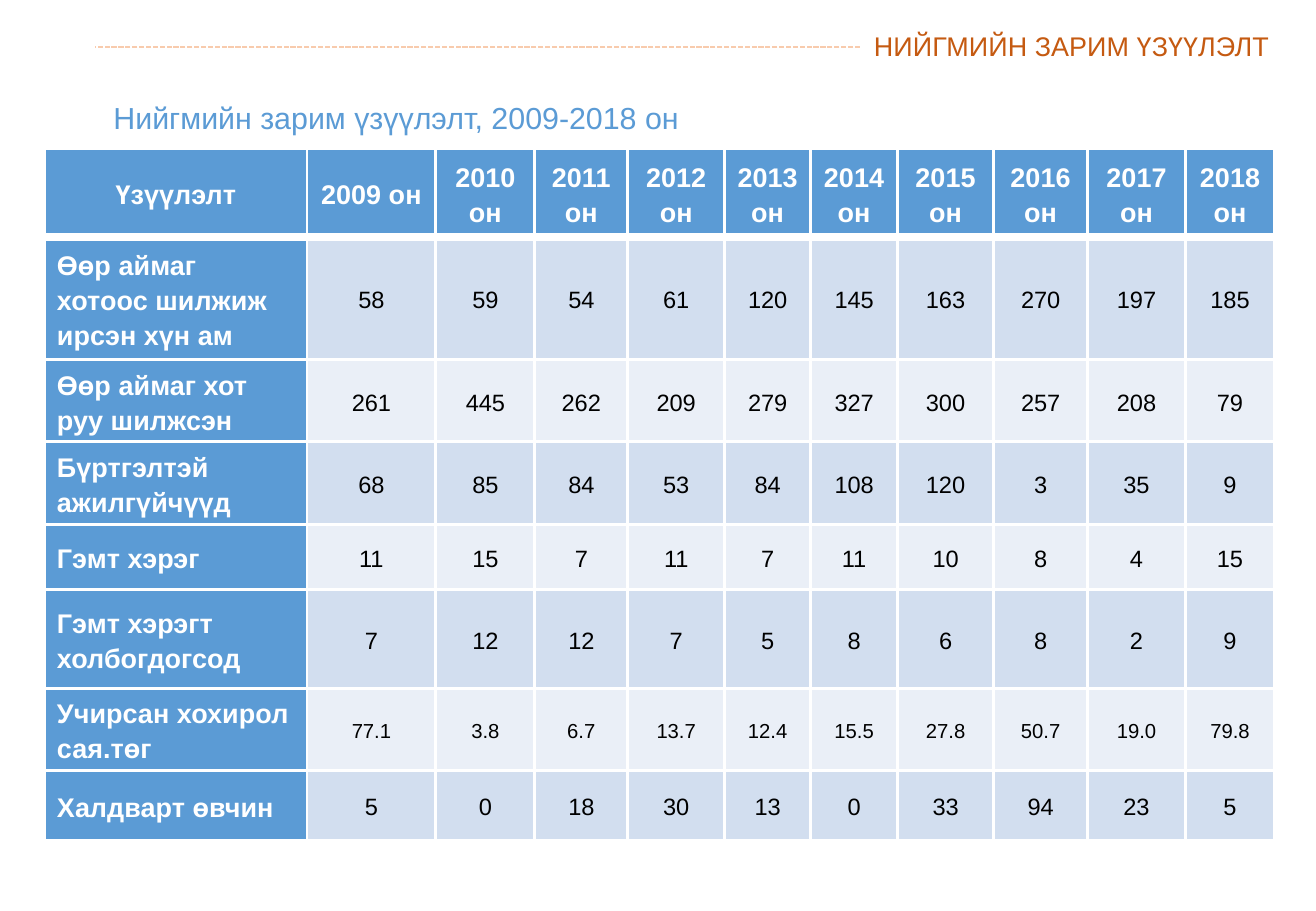
from lxml import etree
from pptx import Presentation
from pptx import util as u
from pptx.dml.color import RGBColor
from pptx.enum import dml, shapes, text
from pptx.oxml.ns import qn

# Content
SECTION = "НИЙГМИЙН ЗАРИМ ҮЗҮҮЛЭЛТ"
CAPTION = "Нийгмийн зарим үзүүлэлт, 2009-2018 он"
HEADER = ["Үзүүлэлт"] + [f"{year} он" for year in range(2009, 2019)]
INDICATORS = [
    ("Өөр аймаг хотоос шилжиж ирсэн хүн ам", "58 59 54 61 120 145 163 270 197 185", 7),
    ("Өөр аймаг хот руу шилжсэн", "261 445 262 209 279 327 300 257 208 79", 7),
    ("Бүртгэлтэй ажилгүйчүүд", "68 85 84 53 84 108 120 3 35 9", 7),
    ("Гэмт хэрэг", "11 15 7 11 7 11 10 8 4 15", 7),
    ("Гэмт хэрэгт холбогдогсод", "7 12 12 7 5 8 6 8 2 9", 7),
    ("Учирсан хохирол сая.төг",
     "77.1 3.8 6.7 13.7 12.4 15.5 27.8 50.7 19.0 79.8", 6),
    ("Халдварт өвчин", "5 0 18 30 13 0 33 94 23 5", 7),
]

# Layout in px
SLIDE = (1316, 911)
SECTION_BOX = (850, 18, 448, 59)
CAPTION_BOX = (44, 87, 704, 61)
RULE = (860, 47, 95, 47)
TABLE_LEFT, TABLE_TOP = 45, 149
COLUMNS = [262, 129, 99, 93, 97, 86, 87, 96, 94, 98, 89]
ROWS = [88, 123, 82, 83, 65, 99, 82, 70]
INSET = 12

# Style
FONT = "Arial"
BLUE, ORANGE, PEACH = "5B9BD5", "C55A11", "F8CBAD"
WHITE, BLACK = "FFFFFF", "000000"
BANDS = ["D2DEEF", "EAEFF7"]
LEFT, CENTER = text.PP_ALIGN.LEFT, text.PP_ALIGN.CENTER


def px(length):
    return u.Emu(length * 3766)


def color(value):
    return RGBColor.from_string(value)


def write(frame, words, size, ink, align=LEFT, bold=False):
    line = frame.paragraphs[0]
    line.alignment = align
    run = line.add_run()
    run.text = words
    run.font.name, run.font.size, run.font.bold = FONT, u.Pt(size), bold
    run.font.color.rgb = color(ink)
    return line


def add_label(box, words, size, ink, align):
    frame = slide.shapes.add_textbox(*map(px, box)).text_frame
    frame.word_wrap = True
    write(frame, words, size, ink, align)


def add_borders(cell, widths):
    props = cell._tc.get_or_add_tcPr()
    for side, width in zip("LRTB", widths):
        edge = etree.SubElement(props, qn(f"a:ln{side}"), w=str(u.Pt(width)))
        fill = etree.SubElement(edge, qn("a:solidFill"))
        etree.SubElement(fill, qn("a:srgbClr"), val=WHITE)


def fill_cell(cell, words, size, ink, fill, align, bold, borders):
    add_borders(cell, borders)
    cell.fill.solid()
    cell.fill.fore_color.rgb = color(fill)
    cell.vertical_anchor = text.MSO_ANCHOR.MIDDLE
    cell.margin_left = cell.margin_right = px(INSET)
    cell.margin_top = cell.margin_bottom = 0
    write(cell.text_frame, words, size, ink, align, bold).line_spacing = 1.15


deck = Presentation()
deck.slide_width, deck.slide_height = map(px, SLIDE)
slide = deck.slides.add_slide(deck.slide_layouts[6])

# Caption
add_label(CAPTION_BOX, CAPTION, 9, BLUE, CENTER)

# Indicator table
table = slide.shapes.add_table(
    len(ROWS), len(COLUMNS), px(TABLE_LEFT), px(TABLE_TOP),
    px(sum(COLUMNS)), px(sum(ROWS))).table
for column, width in zip(table.columns, COLUMNS):
    column.width = px(width)
for row, height in zip(table.rows, ROWS):
    row.height = px(height)

for c, heading in enumerate(HEADER):
    fill_cell(table.cell(0, c), heading, 8, WHITE, BLUE, CENTER, True, (1, 1, 1, 3))
for r, (indicator, values, size) in enumerate(INDICATORS, 1):
    borders = (1, 1, 3 if r == 1 else 1, 1)
    fill_cell(table.cell(r, 0), indicator, 8, WHITE, BLUE, LEFT, True, borders)
    for c, value in enumerate(values.split(), 1):
        fill_cell(table.cell(r, c), value, size, BLACK, BANDS[(r - 1) % 2],
                  CENTER, False, borders)

# Section heading with dashed rule
rule = slide.shapes.add_connector(shapes.MSO_CONNECTOR.STRAIGHT, *map(px, RULE))
rule.line.color.rgb = color(PEACH)
rule.line.width = u.Pt(0.5)
rule.line.dash_style = dml.MSO_LINE.SQUARE_DOT
etree.SubElement(rule._element.spPr, qn("a:effectLst"))
add_label(SECTION_BOX, SECTION, 8, ORANGE, LEFT)

deck.save("out.pptx")
